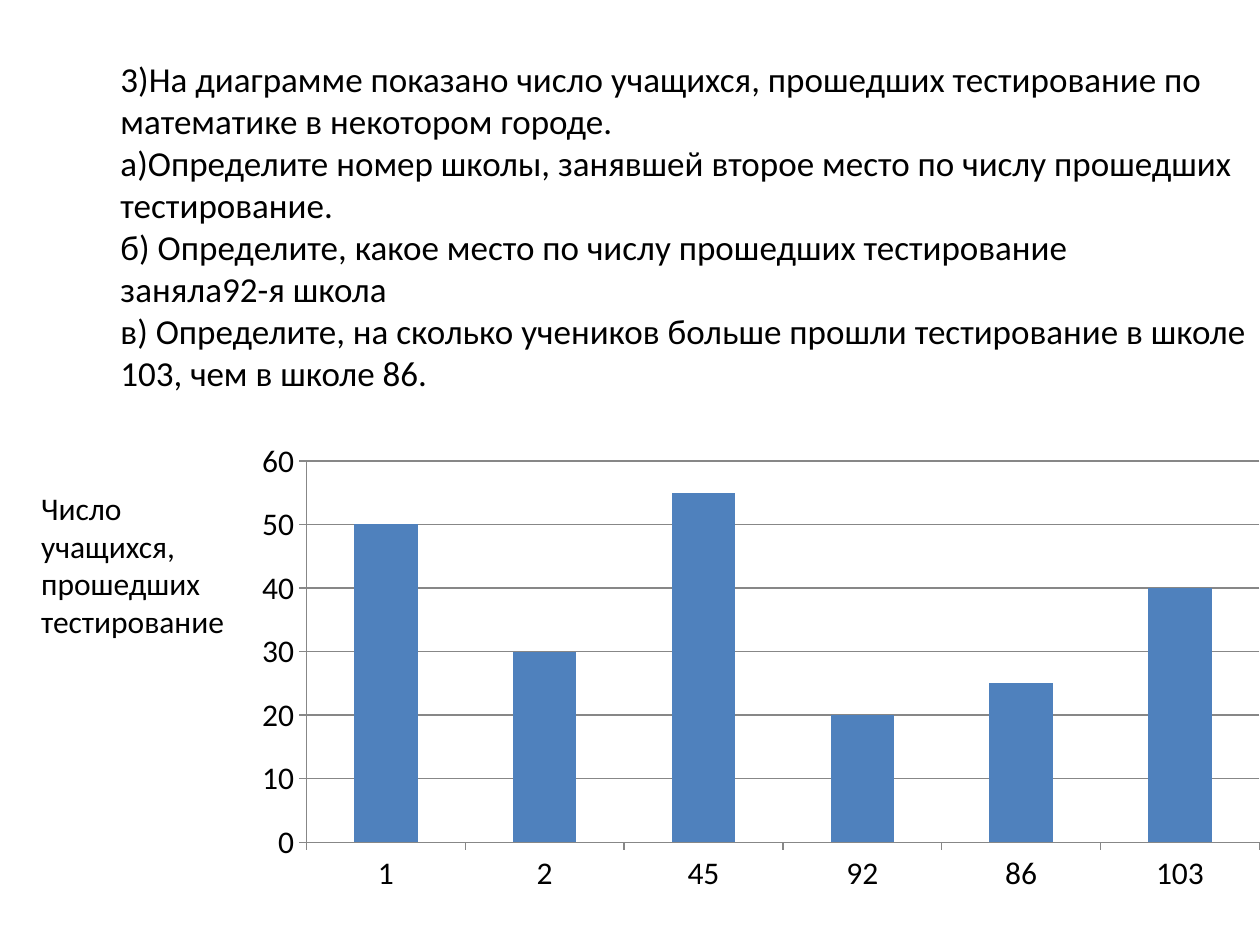
import pptx
import pptx.chart.data
import pptx.dml.color
import pptx.enum.chart
import pptx.enum.text
import pptx.oxml
import pptx.oxml.ns
import pptx.util
from pptx.util import Cm

FONT = "Calibri"
BLACK, GRAY, BLUE = "000000", "878787", "4F81BD"

TASK = (
    "3)На диаграмме показано число учащихся, прошедших тестирование по математике в некотором городе.\n"
    "а)Определите номер школы, занявшей второе место по числу прошедших тестирование.\n"
    "б) Определите, какое место по числу прошедших тестирование \n"
    "заняла92-я школа\n"
    "в) Определите, на сколько учеников больше прошли тестирование в школе 103, чем в школе 86."
)
AXIS_LABEL = ["Число учащихся,", "прошедших тестирование"]
RESULTS = {"1": 50, "2": 30, "45": 55, "92": 20, "86": 25, "103": 40}


def color(value):
    return pptx.dml.color.RGBColor.from_string(value)


def style_font(font, size):
    font.name = FONT
    font.size = pptx.util.Pt(size)
    font.color.rgb = color(BLACK)


def add_text(slide, box, paragraphs, size, anchor):
    """Add a wrapped text box; a newline inside a paragraph is a line break."""
    text_frame = slide.shapes.add_textbox(*box).text_frame
    text_frame.word_wrap = True
    text_frame.vertical_anchor = anchor
    for index, text in enumerate(paragraphs):
        paragraph = text_frame.add_paragraph() if index else text_frame.paragraphs[0]
        paragraph.text = text
        for run in paragraph.runs:
            style_font(run.font, size)


def set_plot_layout(chart, x, y, width, height):
    """Fix the inner plot area as fractions of the chart."""
    plot_area = chart.plots[0]._element.getparent()
    for layout in plot_area.findall(pptx.oxml.ns.qn("c:layout")):
        plot_area.remove(layout)
    sizes = {"x": x, "y": y, "w": width, "h": height}
    values = "".join(f'<c:{name} val="{value}"/>' for name, value in sizes.items())
    plot_area.insert(0, pptx.oxml.parse_xml(
        f'<c:layout {pptx.oxml.ns.nsdecls("c")}><c:manualLayout>'
        '<c:layoutTarget val="inner"/><c:xMode val="edge"/><c:yMode val="edge"/>'
        f'{values}</c:manualLayout></c:layout>'))


def style_line(line):
    line.color.rgb = color(GRAY)
    line.width = pptx.util.Pt(0.75)


def add_column_chart(slide, box, results):
    chart_data = pptx.chart.data.CategoryChartData()
    chart_data.categories = list(results)
    chart_data.add_series("Series 1", list(results.values()))
    chart = slide.shapes.add_chart(
        pptx.enum.chart.XL_CHART_TYPE.COLUMN_CLUSTERED, *box, chart_data).chart
    chart.has_title = False
    chart.has_legend = False
    style_font(chart.font, 18)
    set_plot_layout(chart, 0.135, 0.144, 0.865, 0.717)

    # Columns
    plot = chart.plots[0]
    plot.vary_by_categories = False
    plot.gap_width = 150
    fill = plot.series[0].format.fill
    fill.solid()
    fill.fore_color.rgb = color(BLUE)

    # Axes and grid
    for axis in (chart.category_axis, chart.value_axis):
        axis.major_tick_mark = pptx.enum.chart.XL_TICK_MARK.OUTSIDE
        axis.minor_tick_mark = pptx.enum.chart.XL_TICK_MARK.NONE
        style_line(axis.format.line)
    value_axis = chart.value_axis
    value_axis.minimum_scale = 0
    value_axis.maximum_scale = 60
    value_axis.major_unit = 10
    value_axis.has_major_gridlines = True
    style_line(value_axis.major_gridlines.format.line)


def main():
    presentation = pptx.Presentation()
    presentation.slide_width = Cm(25.4)
    presentation.slide_height = Cm(19.05)
    slide = presentation.slides.add_slide(presentation.slide_layouts[6])

    # Task wording
    add_text(slide, (Cm(2.18), Cm(0.58), Cm(24.13), Cm(7.95)), [TASK], 20,
             pptx.enum.text.MSO_ANCHOR.MIDDLE)

    # Chart with its vertical axis label
    add_column_chart(slide, (Cm(3.18), Cm(7.75), Cm(22.22), Cm(10.72)), RESULTS)
    add_text(slide, (Cm(0.58), Cm(9.73), Cm(4.57), Cm(3.33)), AXIS_LABEL, 18,
             pptx.enum.text.MSO_ANCHOR.TOP)

    presentation.save("out.pptx")


if __name__ == "__main__":
    main()
